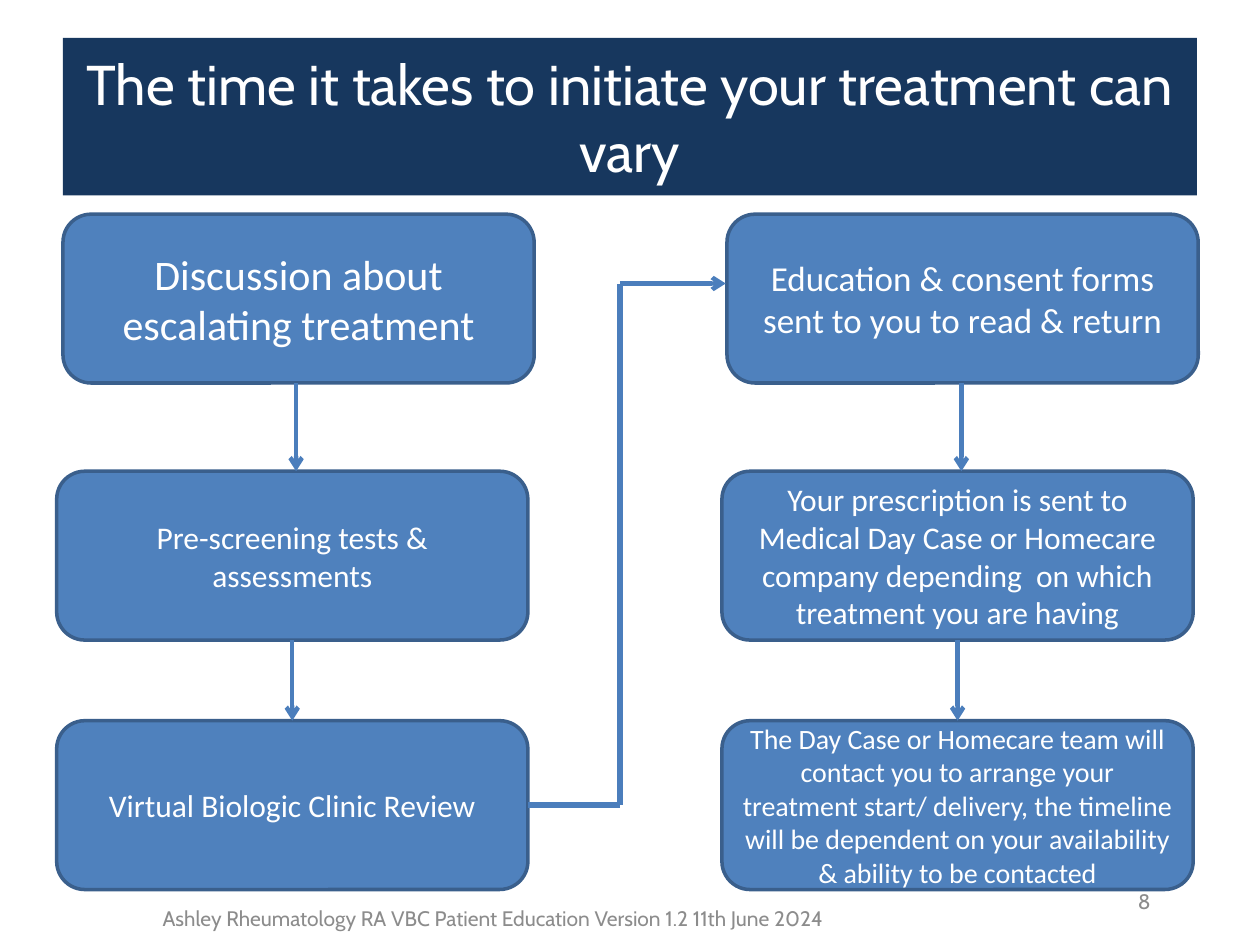
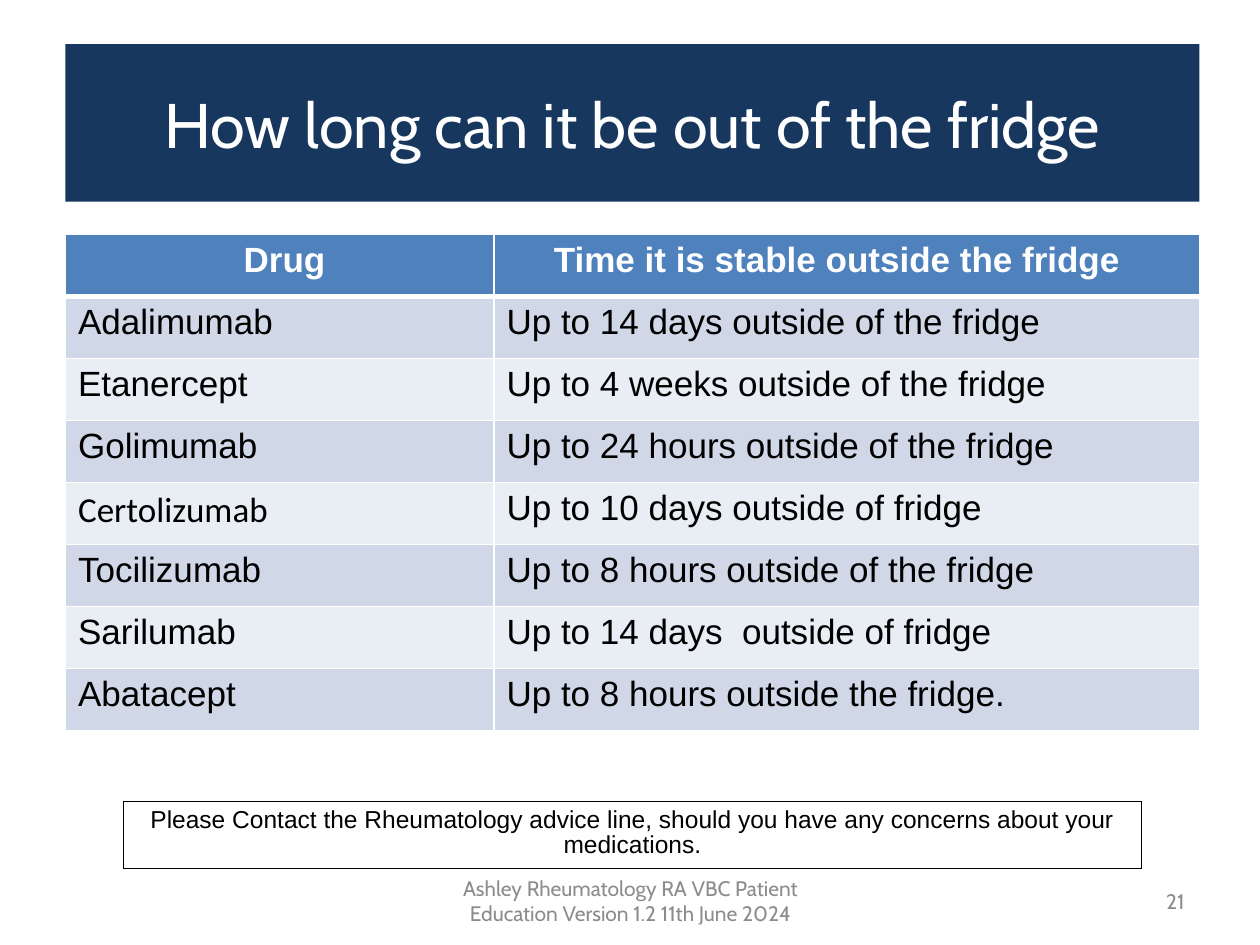
from lxml.etree import SubElement
from pptx import Presentation
from pptx.dml.color import RGBColor
from pptx.enum.shapes import MSO_CONNECTOR, MSO_SHAPE
from pptx.enum.text import MSO_ANCHOR, PP_ALIGN
from pptx.oxml.ns import qn
from pptx.util import Inches, Pt

NAVY = RGBColor(0x17, 0x37, 0x5E)
BLUE = RGBColor(0x4F, 0x81, 0xBD)
BOX_EDGE = RGBColor(0x3A, 0x5F, 0x8C)
ARROW_BLUE = RGBColor(0x4B, 0x7E, 0xBC)
PALE_BLUE = RGBColor(0xD0, 0xD8, 0xE8)
PALEST_BLUE = RGBColor(0xE9, 0xED, 0xF4)
GREY = RGBColor(0x8C, 0x8C, 0x8C)
WHITE = RGBColor(0xFF, 0xFF, 0xFF)
BLACK = RGBColor(0, 0, 0)

FOOTER = "Ashley Rheumatology RA VBC Patient Education Version 1.2 11th June 2024"


def write(frame, text, size, font, colour, align=PP_ALIGN.CENTER, bold=False):
    frame.word_wrap = True
    paragraph = frame.paragraphs[0]
    paragraph.alignment = align
    run = paragraph.add_run()
    run.text = text
    run.font.size = Pt(size)
    run.font.name = font
    run.font.bold = bold
    run.font.color.rgb = colour


def set_borders(cell, colour, bottom=1):
    properties = cell._tc.get_or_add_tcPr()
    for side, width in (("lnL", 1), ("lnR", 1), ("lnT", 1), ("lnB", bottom)):
        border = SubElement(properties, qn(f"a:{side}"), w=str(Pt(width)))
        fill = SubElement(border, qn("a:solidFill"))
        SubElement(fill, qn("a:srgbClr"), val=str(colour))


prs = Presentation()
prs.slide_width = Inches(10)
prs.slide_height = Inches(7.5)
timeline = prs.slides.add_slide(prs.slide_layouts[6])
storage = prs.slides.add_slide(prs.slide_layouts[6])

for slide, title, size, left, top in (
    (timeline, "The time it takes to initiate your treatment can vary", 32, 0.5, 0.3),
    (storage, "How long can it be out of the fridge", 36, 0.52, 0.35),
):
    band = slide.shapes.add_shape(
        MSO_SHAPE.RECTANGLE, Inches(left), Inches(top), Inches(9), Inches(1.25))
    band.shadow.inherit = False
    band.fill.solid()
    band.fill.fore_color.rgb = NAVY
    band.line.fill.background()
    band.text_frame.vertical_anchor = MSO_ANCHOR.MIDDLE
    write(band.text_frame, title, size, "Cabin", WHITE)

for slide, text, left, top, width, align in (
    (timeline, "8", 6.9, 6.95, 2.33, PP_ALIGN.RIGHT),
    (timeline, FOOTER, 0.68, 7.09, 6.47, PP_ALIGN.CENTER),
    (storage, FOOTER, 3.42, 6.95, 3.17, PP_ALIGN.CENTER),
    (storage, "21", 7.17, 6.95, 2.33, PP_ALIGN.RIGHT),
):
    footer = slide.shapes.add_textbox(
        Inches(left), Inches(top), Inches(width), Inches(0.4)).text_frame
    footer.vertical_anchor = MSO_ANCHOR.MIDDLE
    write(footer, text, 12, "Cabin", GREY, align)

STEP_TOPS = (1.7, 3.74, 5.72)
STEP_WIDTH, STEP_HEIGHT = 3.74, 1.34
steps = (
    ((0.5, 0.45, 0.45), (
        ("Discussion about escalating treatment", 24),
        ("Pre-screening tests & assessments", 18),
        ("Virtual Biologic Clinic Review", 18),
    )),
    ((5.77, 5.73, 5.73), (
        ("Education & consent forms sent to you to read & return", 20),
        ("Your prescription is sent to Medical Day Case or Homecare company "
         "depending  on which treatment you are having", 18),
        ("The Day Case or Homecare team will contact you to arrange your "
         "treatment start/ delivery, the timeline will be dependent on your "
         "availability & ability to be contacted", 16),
    )),
)
for lefts, column in steps:
    for left, top, (text, size) in zip(lefts, STEP_TOPS, column):
        step = timeline.shapes.add_shape(
            MSO_SHAPE.ROUNDED_RECTANGLE, Inches(left), Inches(top),
            Inches(STEP_WIDTH), Inches(STEP_HEIGHT))
        step.shadow.inherit = False
        step.fill.solid()
        step.fill.fore_color.rgb = BLUE
        step.line.color.rgb = BOX_EDGE
        step.line.width = Pt(2)
        step.text_frame.vertical_anchor = MSO_ANCHOR.MIDDLE
        write(step.text_frame, text, size, "Calibri", WHITE)

links = [
    (4.19, 6.39, 4.92, 6.39, 3, False),
    (4.92, 6.39, 4.92, 2.25, 3, False),
    (4.92, 2.25, 5.76, 2.25, 2.5, True),
]
for centres in ((2.35, 2.32), (7.63, 7.6)):
    for x, above, below in zip(centres, STEP_TOPS, STEP_TOPS[1:]):
        links.append((x, above + STEP_HEIGHT, x, below, 2.5, True))

for x1, y1, x2, y2, width, has_arrow in links:
    link = timeline.shapes.add_connector(
        MSO_CONNECTOR.STRAIGHT, Inches(x1), Inches(y1), Inches(x2), Inches(y2))
    link.line.color.rgb = ARROW_BLUE
    link.line.width = Pt(width)
    if has_arrow:
        SubElement(link.line._get_or_add_ln(), qn("a:tailEnd"), type="arrow")
    SubElement(link._element.spPr, qn("a:effectLst"))

stability = (
    (" Drug", "Time it is stable outside the fridge  "),
    ("Adalimumab", "Up to 14 days outside of the fridge"),
    ("Etanercept", "Up to 4 weeks outside of the fridge"),
    ("Golimumab", "Up to 24 hours outside of the fridge"),
    ("Certolizumab", "Up to 10 days outside of fridge"),
    ("Tocilizumab", "Up to 8 hours outside of the fridge"),
    ("Sarilumab", "Up to 14 days  outside of fridge"),
    ("Abatacept", "Up to 8 hours outside the fridge."),
)
drugs = storage.shapes.add_table(
    len(stability), 2, Inches(0.52), Inches(1.86), Inches(9), Inches(3.94)).table
drugs.columns[0].width = Inches(3.4)
drugs.columns[1].width = Inches(5.6)
for row, entries in enumerate(stability):
    heading = row == 0
    row_fill = BLUE if heading else (PALEST_BLUE, PALE_BLUE)[row % 2]
    for column, text in enumerate(entries):
        cell = drugs.cell(row, column)
        set_borders(cell, WHITE, 3 if heading else 1)
        cell.fill.solid()
        cell.fill.fore_color.rgb = row_fill
        write(cell.text_frame, text, 20,
              "Calibri" if text == "Certolizumab" else "Arial",
              WHITE if heading else BLACK,
              PP_ALIGN.CENTER if heading else PP_ALIGN.LEFT, heading)

advice = storage.shapes.add_table(
    1, 1, Inches(0.98), Inches(6.36), Inches(8.08), Inches(0.53)).table
advice.first_row = False
advice.horz_banding = False
advice_cell = advice.cell(0, 0)
set_borders(advice_cell, BLACK)
advice_cell.fill.background()
write(advice_cell.text_frame,
      "Please Contact the Rheumatology advice line, should you have any "
      "concerns about your medications.", 14, "Arial", BLACK)
advice_cell.text_frame.paragraphs[0].line_spacing = 0.93

prs.save("out.pptx")
